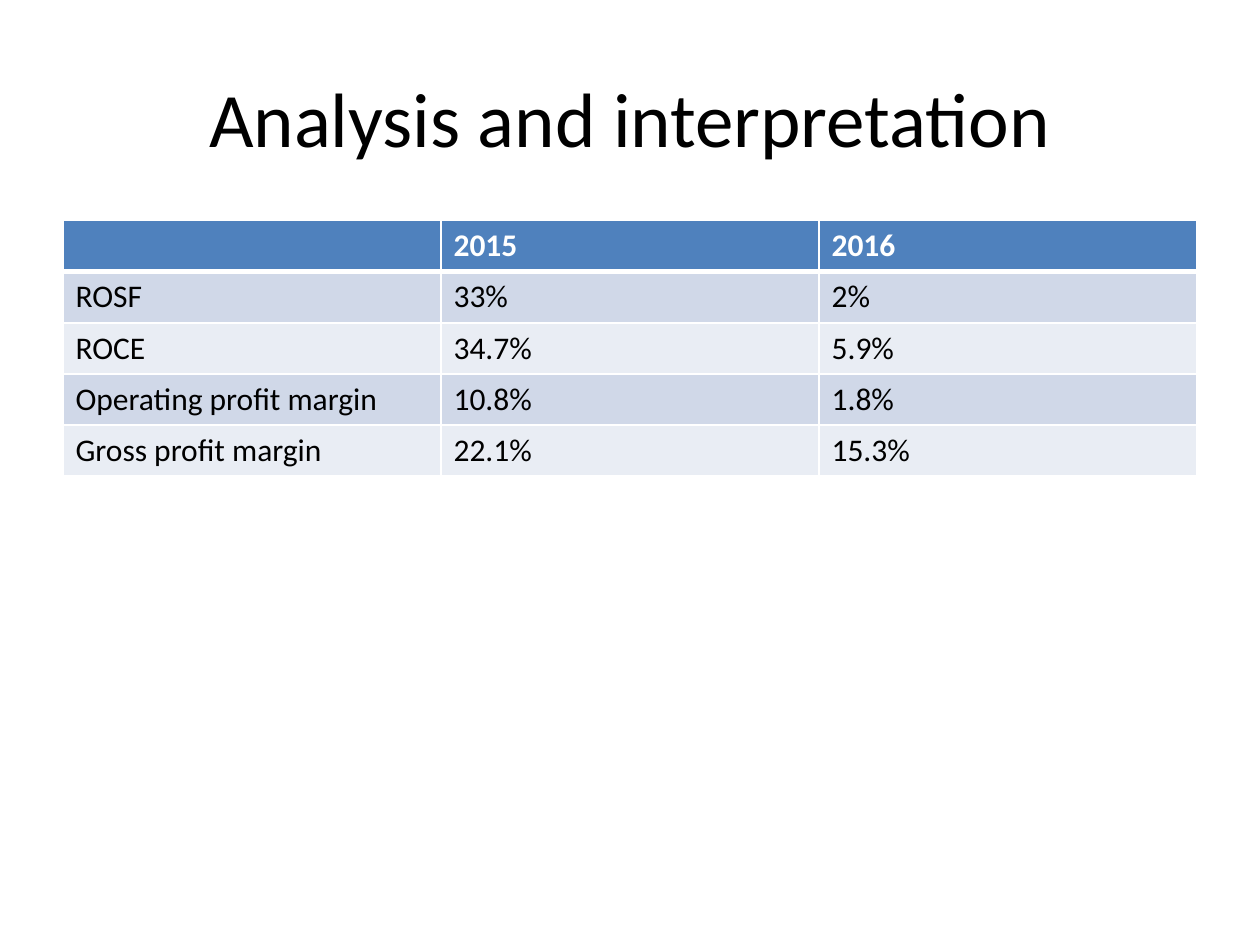
from dataclasses import dataclass

from lxml.etree import SubElement
from pptx import Presentation
from pptx.dml.color import RGBColor
from pptx.enum.text import MSO_ANCHOR, PP_ALIGN
from pptx.oxml.ns import qn
from pptx.util import Inches, Pt

COLORS = {
    "text": "000000",
    "white": "FFFFFF",
    "header": "4F81BD",
    "odd_band": "D0D8E8",
    "even_band": "E9EDF4",
}
FONT = "Calibri"
WIDTH, HEIGHT = Inches(10), Inches(7.5)
MARGIN = 0.05  # share of the slide's width
TABLE_HEIGHT = Inches(2.03)


@dataclass
class RatioRow:
    label: str
    first_year: str
    second_year: str

    def texts(self) -> list[str]:
        return [self.label, self.first_year, self.second_year]


ROWS = [
    RatioRow("", "2015", "2016"),
    RatioRow("ROSF", "33%", "2%"),
    RatioRow("ROCE", "34.7%", "5.9%"),
    RatioRow("Operating profit margin", "10.8%", "1.8%"),
    RatioRow("Gross profit margin", "22.1%", "15.3%"),
]


def set_fill(item, color: str) -> None:
    item.fill.solid()
    item.fill.fore_color.rgb = RGBColor.from_string(COLORS[color])


def add_span(para, text: str, size: float, color: str, bold: bool = False) -> None:
    span = para.add_run()
    span.text = text
    span.font.name = FONT
    span.font.size = Pt(size)
    span.font.bold = bold
    span.font.color.rgb = RGBColor.from_string(COLORS[color])


def set_borders(cell, top: float, bottom: float) -> None:
    properties = cell._tc.get_or_add_tcPr()
    for side, width in {"L": 1, "R": 1, "T": top, "B": bottom}.items():
        line = SubElement(properties, qn(f"a:ln{side}"), w=str(Pt(width)))
        fill = SubElement(line, qn("a:solidFill"))
        SubElement(fill, qn("a:srgbClr"), val=COLORS["white"])


def format_title(slide, text: str) -> None:
    title = slide.shapes.title
    title.left, title.top = int(WIDTH * MARGIN), int(HEIGHT * 0.04)
    title.width, title.height = int(WIDTH * (1 - 2 * MARGIN)), Inches(1.25)
    set_fill(title, "white")
    title.text_frame.vertical_anchor = MSO_ANCHOR.MIDDLE
    para = title.text_frame.paragraphs[0]
    para.alignment = PP_ALIGN.CENTER
    add_span(para, text, 44, "text")


def add_ratio_table(slide, rows: list[RatioRow]) -> None:
    table = slide.shapes.add_table(
        len(rows), 3, int(WIDTH * MARGIN), Inches(1.75),
        int(WIDTH * (1 - 2 * MARGIN)), TABLE_HEIGHT,
    ).table
    for row_index, row in enumerate(rows):
        is_header = row_index == 0
        band = "header" if is_header else "odd_band" if row_index % 2 else "even_band"
        for column_index, text in enumerate(row.texts()):
            cell = table.cell(row_index, column_index)
            # Borders come before the fill in the cell's properties
            set_borders(cell, 3 if row_index == 1 else 1, 3 if is_header else 1)
            set_fill(cell, band)
            if text:
                para = cell.text_frame.paragraphs[0]
                add_span(para, text, 18, "white" if is_header else "text", is_header)


def main() -> None:
    deck = Presentation()
    deck.slide_width, deck.slide_height = WIDTH, HEIGHT
    page = deck.slides.add_slide(deck.slide_layouts.get_by_name("Title Only"))

    # Heading
    format_title(page, "Analysis and interpretation")

    # Profitability ratios by year
    add_ratio_table(page, ROWS)

    deck.save("out.pptx")


if __name__ == "__main__":
    main()
